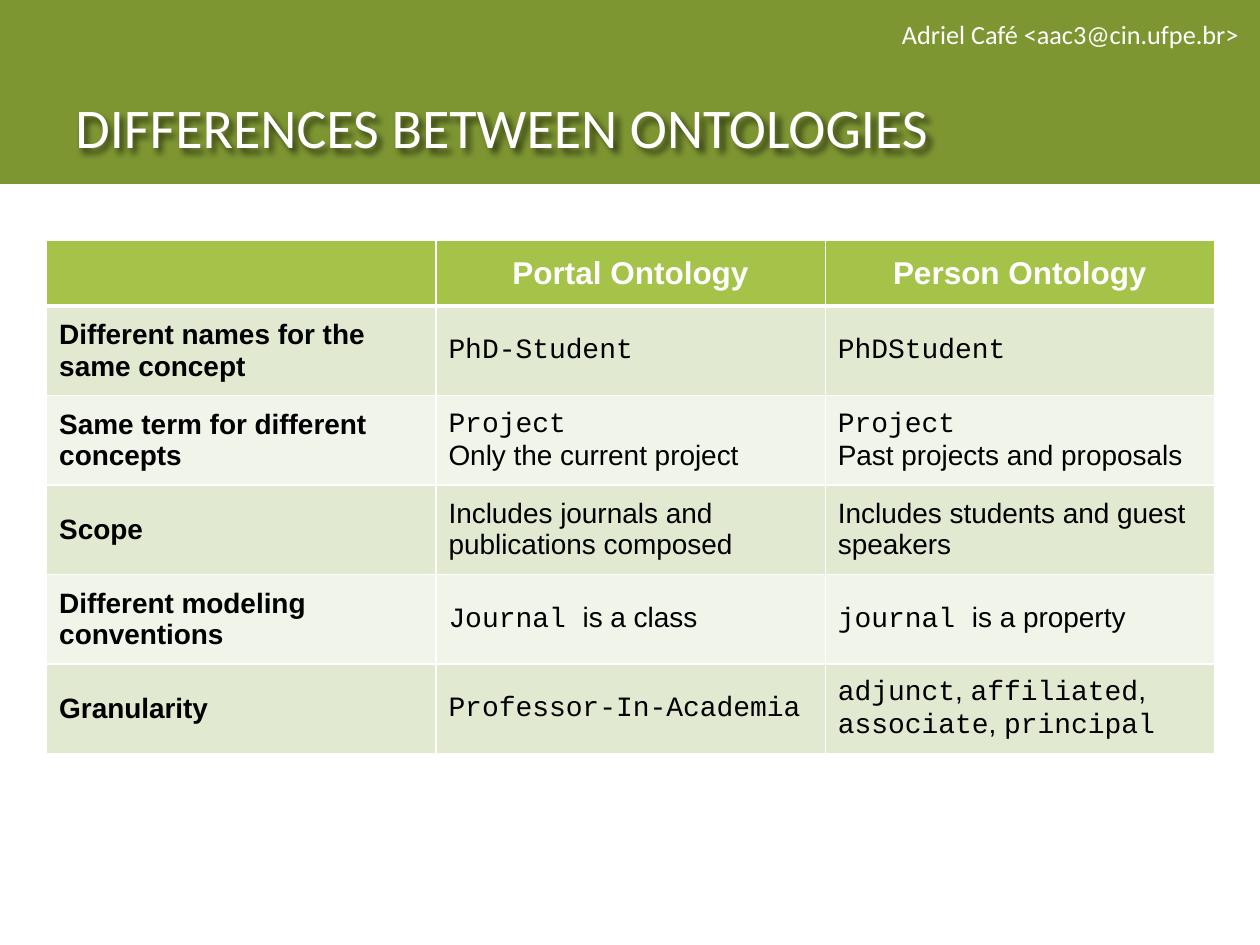
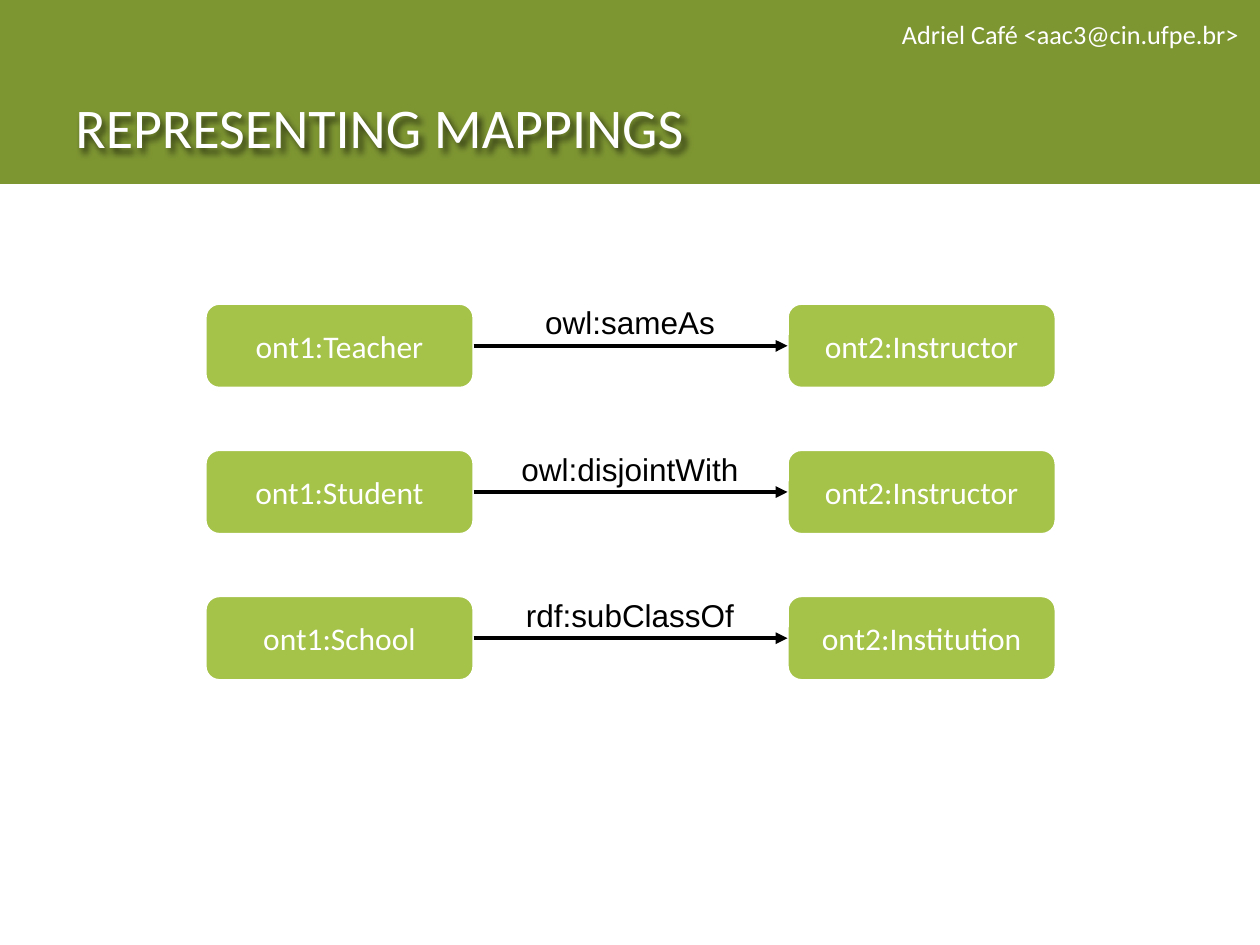
from lxml.etree import SubElement
from pptx import Presentation
from pptx.dml.color import RGBColor
from pptx.enum.shapes import MSO_CONNECTOR, MSO_SHAPE
from pptx.enum.text import MSO_ANCHOR, PP_ALIGN
from pptx.oxml.ns import qn
from pptx.util import Inches, Pt

OLIVE = RGBColor(0x7E, 0x96, 0x32)
LIME = RGBColor(0xA5, 0xC2, 0x49)
ROW_DARK = RGBColor(0xE1, 0xE9, 0xD0)
ROW_LIGHT = RGBColor(0xF0, 0xF4, 0xE9)
WHITE = RGBColor(0xFF, 0xFF, 0xFF)
BLACK = RGBColor(0, 0, 0)

HEADING_FONT, BODY_FONT, CODE_FONT = "Calibri", "Arial", "Courier New"
AUTHOR = "Adriel Café <aac3@cin.ufpe.br>"

# Text between backticks is set in the code font.
ONTOLOGY_ROWS = [
    ("", "Portal Ontology", "Person Ontology"),
    ("Different names for the same concept", "`PhD-Student`", "`PhDStudent`"),
    ("Same term for different concepts",
     "`Project`\nOnly the current project",
     "`Project`\nPast projects and proposals"),
    ("Scope", "Includes journals and publications composed",
     "Includes students and guest speakers"),
    ("Different modeling conventions",
     "`Journal `is a class", "`journal `is a property"),
    ("Granularity", "`Professor-In-Academia`",
     "`adjunct`, `affiliated`, `associate`, `principal`"),
]

MAPPINGS = [
    ("ont1:Teacher", "owl:sameAs", "ont2:Instructor"),
    ("ont1:Student", "owl:disjointWith", "ont2:Instructor"),
    ("ont1:School", "rdf:subClassOf", "ont2:Institution"),
]


class Deck:
    """Holds the shared style and the slide being built."""

    def __init__(self):
        self.presentation = Presentation()
        self.presentation.slide_width = Inches(10)
        self.presentation.slide_height = Inches(7.5)
        self.slide = None

    def new_slide(self, title):
        blank = self.presentation.slide_layouts[6]
        self.slide = self.presentation.slides.add_slide(blank)
        self.box(MSO_SHAPE.RECTANGLE, 0, 0, 10, 1.46, OLIVE)
        heading = self.text(title, 0.5, 0.51, 8.99, 0.81, 32, HEADING_FONT,
                            WHITE, anchor=MSO_ANCHOR.BOTTOM)
        self.cast_shadow(heading)
        self.text(AUTHOR, 3.95, 0.03, 5.98, 0.48, 15, HEADING_FONT, WHITE,
                  PP_ALIGN.RIGHT, MSO_ANCHOR.MIDDLE)

    def cast_shadow(self, shape):
        effects = SubElement(shape._element.spPr, qn("a:effectLst"))
        shadow = SubElement(effects, qn("a:outerShdw"), blurRad="50800",
                            dist="38100", dir="2700000", algn="tl")
        shade = SubElement(shadow, qn("a:srgbClr"), val=str(BLACK))
        SubElement(shade, qn("a:alpha"), val="60000")

    def add_runs(self, frame, content, size, font, color, align=PP_ALIGN.LEFT,
                 bold=False):
        """Fill a text frame run by run, honouring backticks and line breaks."""
        paragraph = frame.paragraphs[0]
        paragraph.alignment = align
        for index, part in enumerate(content.split("`")):
            for line_number, line in enumerate(part.split("\n")):
                if line_number:
                    paragraph.add_line_break()
                if line:
                    run = paragraph.add_run()
                    run.text = line
                    run.font.name = CODE_FONT if index % 2 else font
                    run.font.size = Pt(size)
                    run.font.bold = bold
                    run.font.color.rgb = color

    def text(self, content, left, top, width, height, size, font, color,
             align=PP_ALIGN.LEFT, anchor=MSO_ANCHOR.TOP):
        textbox = self.slide.shapes.add_textbox(
            Inches(left), Inches(top), Inches(width), Inches(height))
        textbox.text_frame.word_wrap = True
        textbox.text_frame.vertical_anchor = anchor
        self.add_runs(textbox.text_frame, content, size, font, color, align)
        return textbox

    def box(self, kind, left, top, width, height, fill):
        shape = self.slide.shapes.add_shape(
            kind, Inches(left), Inches(top), Inches(width), Inches(height))
        shape.shadow.inherit = False
        shape.fill.solid()
        shape.fill.fore_color.rgb = fill
        shape.line.fill.background()
        return shape

    def concept(self, name, left, top):
        concept = self.box(MSO_SHAPE.ROUNDED_RECTANGLE, left, top, 2.13, 0.67,
                           LIME)
        concept.line.color.rgb = WHITE
        concept.line.width = Pt(1.5)
        concept.text_frame.vertical_anchor = MSO_ANCHOR.MIDDLE
        self.add_runs(concept.text_frame, name, 18, HEADING_FONT, WHITE,
                      PP_ALIGN.CENTER)
        return concept

    def arrow(self, source, target):
        """Draw an arrow from the right side of source to the left of target."""
        arrow = self.slide.shapes.add_connector(MSO_CONNECTOR.STRAIGHT,
                                                0, 0, 0, 0)
        arrow.begin_connect(source, 3)
        arrow.end_connect(target, 1)
        arrow.line.color.rgb = BLACK
        arrow.line.width = Pt(2.25)
        SubElement(arrow.line._get_or_add_ln(), qn("a:tailEnd"),
                   type="triangle")
        SubElement(arrow._element.spPr, qn("a:effectLst"))

    def cell_borders(self, cell, bottom_width):
        properties = cell._tc.get_or_add_tcPr()
        widths = {"lnL": 1, "lnR": 1, "lnT": 1, "lnB": bottom_width}
        for side, width in widths.items():
            line = SubElement(properties, qn(f"a:{side}"), w=str(Pt(width)))
            fill = SubElement(line, qn("a:solidFill"))
            SubElement(fill, qn("a:srgbClr"), val=str(WHITE))

    def table(self, rows, left, top, column_width, header_height, row_height):
        column_count = len(rows[0])
        height = header_height + row_height * (len(rows) - 1)
        table = self.slide.shapes.add_table(
            len(rows), column_count, Inches(left), Inches(top),
            Inches(column_width * column_count), Inches(height)).table
        for column in table.columns:
            column.width = Inches(column_width)
        for r, row in enumerate(rows):
            header = r == 0
            table.rows[r].height = Inches(header_height if header
                                          else row_height)
            for c, content in enumerate(row):
                cell = table.cell(r, c)
                cell.vertical_anchor = MSO_ANCHOR.MIDDLE
                self.cell_borders(cell, 3 if header else 1)
                cell.fill.solid()
                cell.fill.fore_color.rgb = (
                    LIME if header else ROW_DARK if r % 2 else ROW_LIGHT)
                self.add_runs(cell.text_frame, content, 18 if header else 16,
                              BODY_FONT, WHITE if header else BLACK,
                              PP_ALIGN.CENTER if header else PP_ALIGN.LEFT,
                              bold=header or c == 0)


def main():
    deck = Deck()

    deck.new_slide("DIFFERENCES BETWEEN ONTOLOGIES")
    deck.table(ONTOLOGY_ROWS, left=0.37, top=1.91, column_width=3.09,
               header_height=0.52, row_height=0.71)

    deck.new_slide("REPRESENTING MAPPINGS")
    for index, (source_name, relation, target_name) in enumerate(MAPPINGS):
        top = 2.41 + 1.16 * index
        source = deck.concept(source_name, 1.63, top)
        target = deck.concept(target_name, 6.25, top)
        deck.text(relation, 4, top - 0.05, 2, 0.4, 18, BODY_FONT, BLACK,
                  PP_ALIGN.CENTER)
        deck.arrow(source, target)

    deck.presentation.save("out.pptx")


if __name__ == "__main__":
    main()
